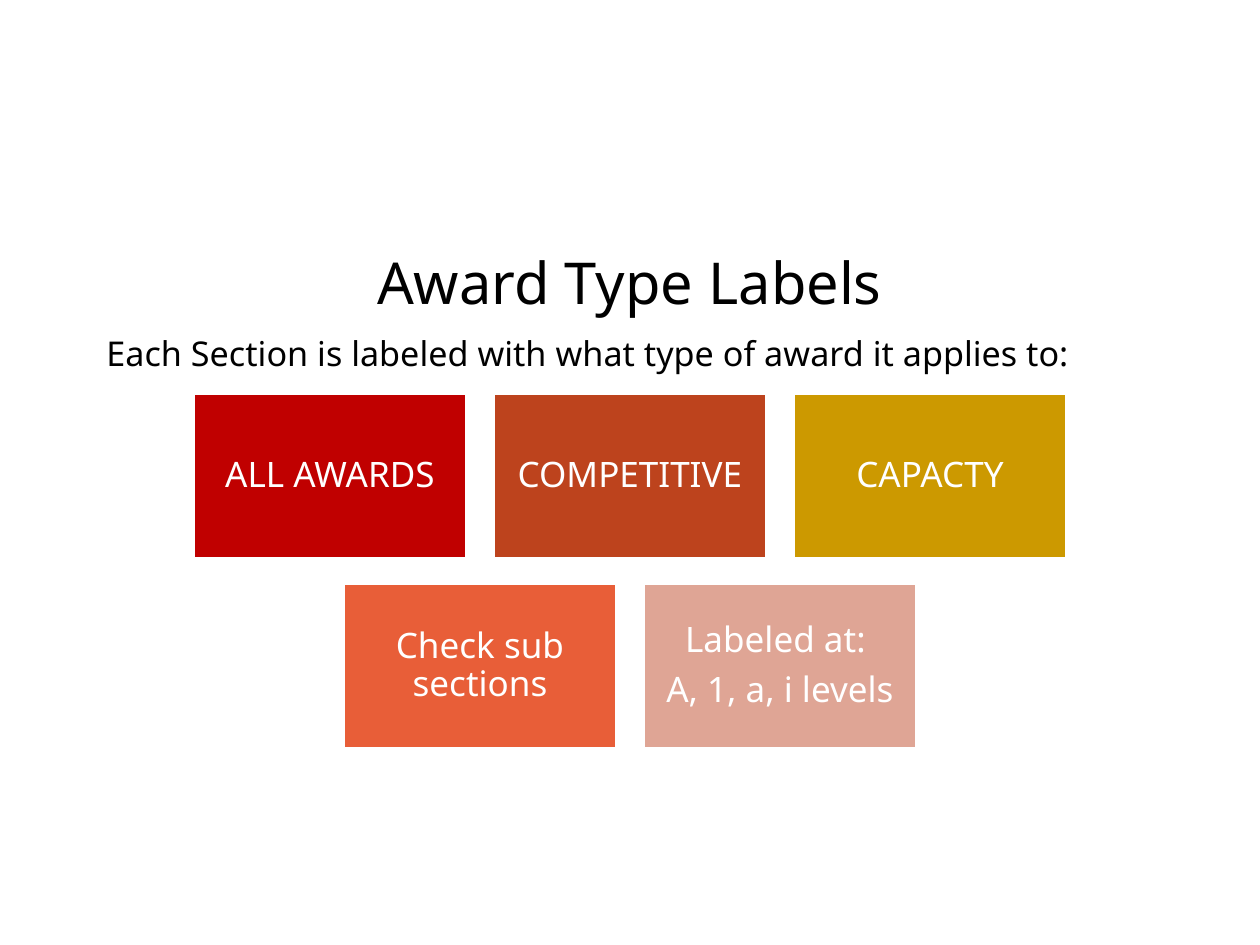
"""Build the award type labels slide."""
from pptx import Presentation
from pptx.dml.color import RGBColor
from pptx.enum.shapes import MSO_SHAPE
from pptx.enum.text import MSO_ANCHOR, PP_ALIGN
from pptx.util import Emu, Pt

RECT = MSO_SHAPE.RECTANGLE
MIDDLE, TOP = MSO_ANCHOR.MIDDLE, MSO_ANCHOR.TOP
CENTER, LEFT = PP_ALIGN.CENTER, PP_ALIGN.LEFT
SCALE = 914400 / 126
WIDE, HIGH = 1260, 945
FONT = "Noto Sans"
COLORS = {
    "black": "000000",
    "white": "FFFFFF",
    "red": "C00000",
    "rust": "BD431D",
    "gold": "CC9900",
    "coral": "E85E38",
    "pink": "DFA595",
}
BOX_W, BOX_H, GAP, BOX_TOP = 272, 164, 28, 394
PITCH = 190
ROWS = [
    [("red", ["ALL AWARDS"]), ("rust", ["COMPETITIVE"]), ("gold", ["CAPACTY"])],
    [("coral", ["Check sub sections"]),
     ("pink", ["Labeled at: ", "A, 1, a, i levels"])],
]


def px(n):
    return Emu(round(n * SCALE))


def color(name):
    return RGBColor.from_string(COLORS[name])


class Deck:
    """Hold the style and the current slide."""

    def __init__(self):
        self.prs = Presentation()
        self.prs.slide_width, self.prs.slide_height = px(WIDE), px(HIGH)
        self.slide = self.prs.slides.add_slide(self.prs.slide_layouts[5])

    def label(self, shape, lines, size, ink, align, anchor):
        frame = shape.text_frame
        frame.word_wrap = True
        frame.vertical_anchor = anchor
        frame.text = "\n".join(lines)
        for para in frame.paragraphs:
            para.alignment = align
            para.font.name, para.font.size = FONT, Pt(size)
            para.font.color.rgb = color(ink)
        return frame

    def title(self, text, x, y, w, h):
        shape = self.slide.shapes.title
        shape.left, shape.top, shape.width, shape.height = map(px, (x, y, w, h))
        self.label(shape, [text], 33, "black", CENTER, MIDDLE)

    def text(self, text, x, y, w, h):
        shape = self.slide.shapes.add_textbox(*map(px, (x, y, w, h)))
        self.label(shape, [text], 19.5, "black", LEFT, TOP)

    def box(self, lines, fill, x, y):
        shape = self.slide.shapes.add_shape(RECT, *map(px, (x, y, BOX_W, BOX_H)))
        shape.shadow.inherit = False
        shape.fill.solid()
        shape.fill.fore_color.rgb = color(fill)
        shape.line.color.rgb = color("white")
        shape.line.width = Pt(1)
        frame = self.label(shape, lines, 20, "white", CENTER, MIDDLE)
        frame.margin_left = frame.margin_right = px(10)
        frame.margin_top = frame.margin_bottom = px(10)
        for para in frame.paragraphs:
            para.line_spacing = 0.9
            para.space_after = Pt(7)

    def row(self, cells, y):
        step = BOX_W + GAP
        left = (WIDE - len(cells) * step + GAP) // 2
        for i, (fill, lines) in enumerate(cells):
            self.box(lines, fill, left + i * step, y)


def main():
    deck = Deck()
    deck.title("Award Type Labels", 94, 228, 1071, 107)
    for i, cells in enumerate(ROWS):
        deck.row(cells, BOX_TOP + i * PITCH)
    deck.text("Each Section is labeled with what type of award it applies to:",
              94, 326, 1071, 96)
    deck.prs.save("out.pptx")


if __name__ == "__main__":
    main()
